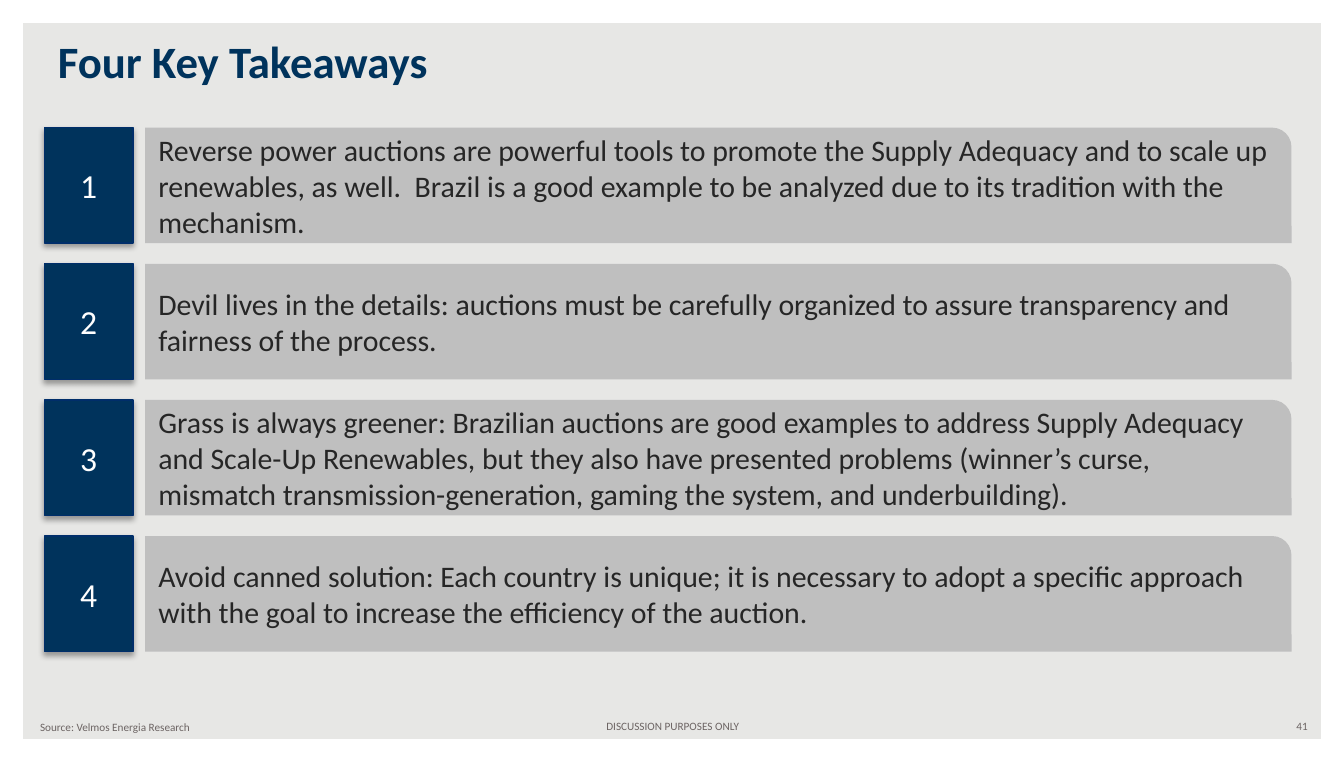
from lxml import etree
from pptx import Presentation
from pptx.dml.color import RGBColor
from pptx.enum.shapes import MSO_SHAPE as Shape
from pptx.enum.text import MSO_ANCHOR as Anchor, MSO_AUTO_SIZE as AutoSize, PP_ALIGN as Align
from pptx.oxml import parse_xml
from pptx.oxml.ns import nsdecls
from pptx.util import Inches, Pt

COLORS = {
    "page": "E7E7E5", "white": "FFFFFF", "navy": "00335C", "edge": "002E6A",
    "panel": "BFBFBF", "ink": "262626", "muted": "6C6463",
}
FONT = "Calibri"
CELL = Inches(0.1)        # side of one grid column and row
COLUMNS, ROWS = 100, 56.7

TAKEAWAYS = [
    "Reverse power auctions are powerful tools to promote the Supply Adequacy and to scale up "
    "renewables, as well.  Brazil is a good example to be analyzed due to its tradition with the "
    "mechanism.",
    "Devil lives in the details: auctions must be carefully organized to assure transparency and "
    "fairness of the process.",
    "Grass is always greener: Brazilian auctions are good examples to address Supply Adequacy "
    "and Scale-Up Renewables, but they also have presented problems (winner’s curse, "
    "mismatch transmission-generation, gaming the system, and underbuilding).",
    "Avoid canned solution: Each country is unique; it is necessary to adopt a specific approach "
    "with the goal to increase the efficiency of the auction.",
]
FIRST_ROW, ROW_STEP, ROW_HEIGHT = 9.5, 10.13, 8.6


def color(name):
    return RGBColor.from_string(COLORS[name])


def write(shape, text, size, ink, align=Align.LEFT, anchor=Anchor.MIDDLE, bold=False):
    frame = shape.text_frame
    frame.word_wrap = True
    frame.auto_size = AutoSize.NONE
    frame.vertical_anchor = anchor
    para = frame.paragraphs[0]
    para.alignment = align
    span = para.add_run()
    span.text = text
    span.font.name, span.font.size, span.font.bold = FONT, Pt(size), bold
    span.font.color.rgb = color(ink)


class SlideBuilder:
    def __init__(self, deck):
        self.page = deck.slides.add_slide(deck.slide_layouts[5])
        fill = self.page.background.fill
        fill.solid()
        fill.fore_color.rgb = color("page")

    def place(self, *cells):
        return [round(cell * CELL) for cell in cells]

    def block(self, kind, cells, fill, line=None):
        shape = self.page.shapes.add_shape(kind, *self.place(*cells))
        shape.shadow.inherit = False
        shape.fill.solid()
        shape.fill.fore_color.rgb = color(fill)
        if line:
            shape.line.color.rgb = color(line)
            shape.line.width = Pt(0.75)
        else:
            shape.line.fill.background()
        return shape

    def border(self):
        frame = self.block(Shape.FRAME, (0, 0, COLUMNS, ROWS), "white")
        frame.adjustments[0] = 0.03

    def title(self, text, cells):
        box = self.page.shapes.title
        box.left, box.top, box.width, box.height = self.place(*cells)
        write(box, text, 24, "navy", anchor=Anchor.BOTTOM, bold=True)

    def label(self, text, cells, align):
        box = self.page.shapes.add_textbox(*self.place(*cells))
        write(box, text, 6, "muted", align)

    def panel(self, text, cells):
        write(self.block(Shape.ROUND_1_RECTANGLE, cells, "panel"), text, 16, "ink")

    def number(self, value, cells):
        tile = self.block(Shape.RECTANGLE, cells, "navy", "edge")
        self.drop_shadow(tile)
        write(tile, str(value), 18, "white", Align.CENTER)

    def drop_shadow(self, shape):
        effects = shape.element.spPr.find("{*}effectLst")
        shadow = parse_xml(
            f'<a:outerShdw {nsdecls("a")} blurRad="{Pt(3.1)}" dist="{Pt(1.8)}" '
            'dir="5400000" rotWithShape="0"/>')
        tint = etree.SubElement(shadow, "{%s}srgbClr" % shadow.nsmap["a"], val="000000")
        etree.SubElement(tint, "{%s}alpha" % shadow.nsmap["a"], val="35000")
        effects.append(shadow)


def main():
    deck = Presentation()
    deck.slide_width, deck.slide_height = round(COLUMNS * CELL), round(ROWS * CELL)
    slide = SlideBuilder(deck)

    # White border and title
    slide.border()
    slide.title("Four Key Takeaways", (3.3, 2, 85, 5))

    # Footer
    slide.label("Source: Velmos Energia Research", (2, 53.1, 31.7, 2), Align.LEFT)
    slide.label("DISCUSSION PURPOSES ONLY", (34.2, 53, 31.7, 2), Align.CENTER)
    slide.label("41", (75, 53, 23.3, 2), Align.RIGHT)

    # Numbered takeaways
    for index, takeaway in enumerate(TAKEAWAYS):
        top = FIRST_ROW + index * ROW_STEP
        slide.panel(takeaway, (10.8, top, 85.3, ROW_HEIGHT))
        slide.number(index + 1, (3.3, top, 6.6, ROW_HEIGHT))

    deck.save("out.pptx")


if __name__ == "__main__":
    main()
